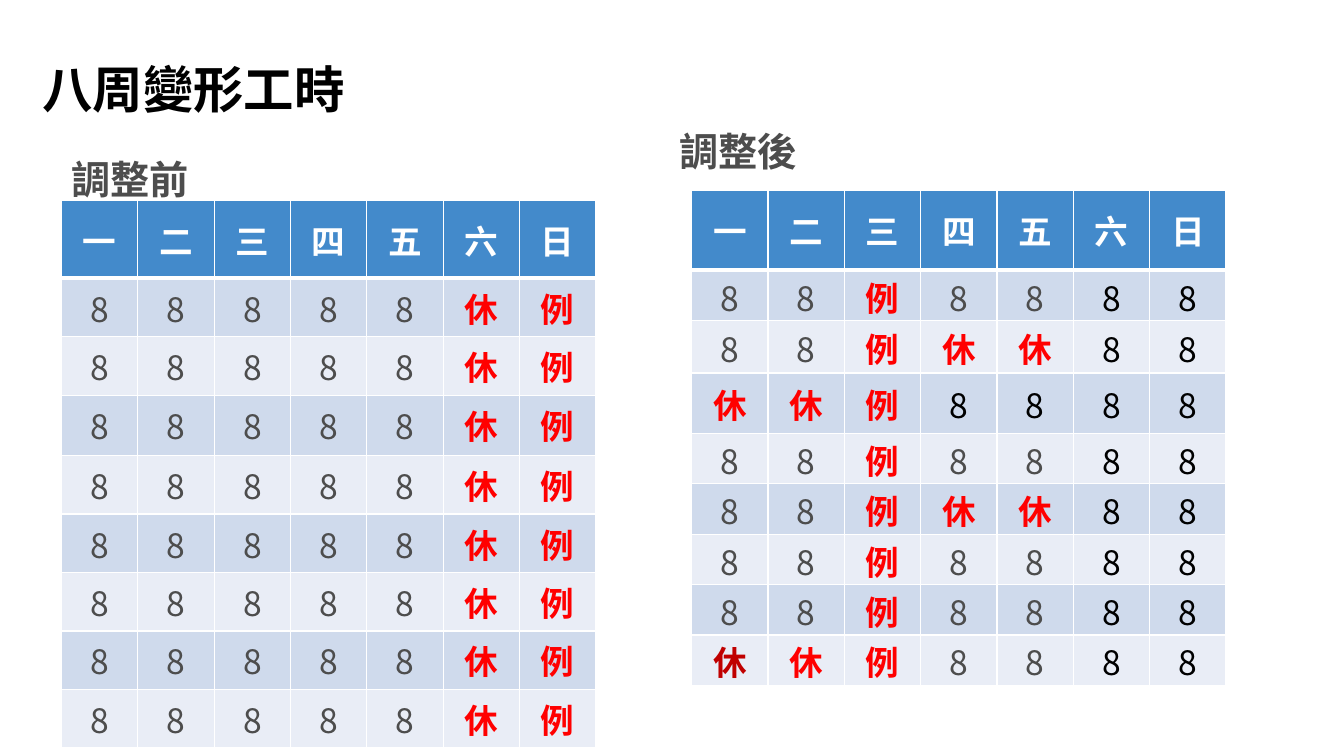
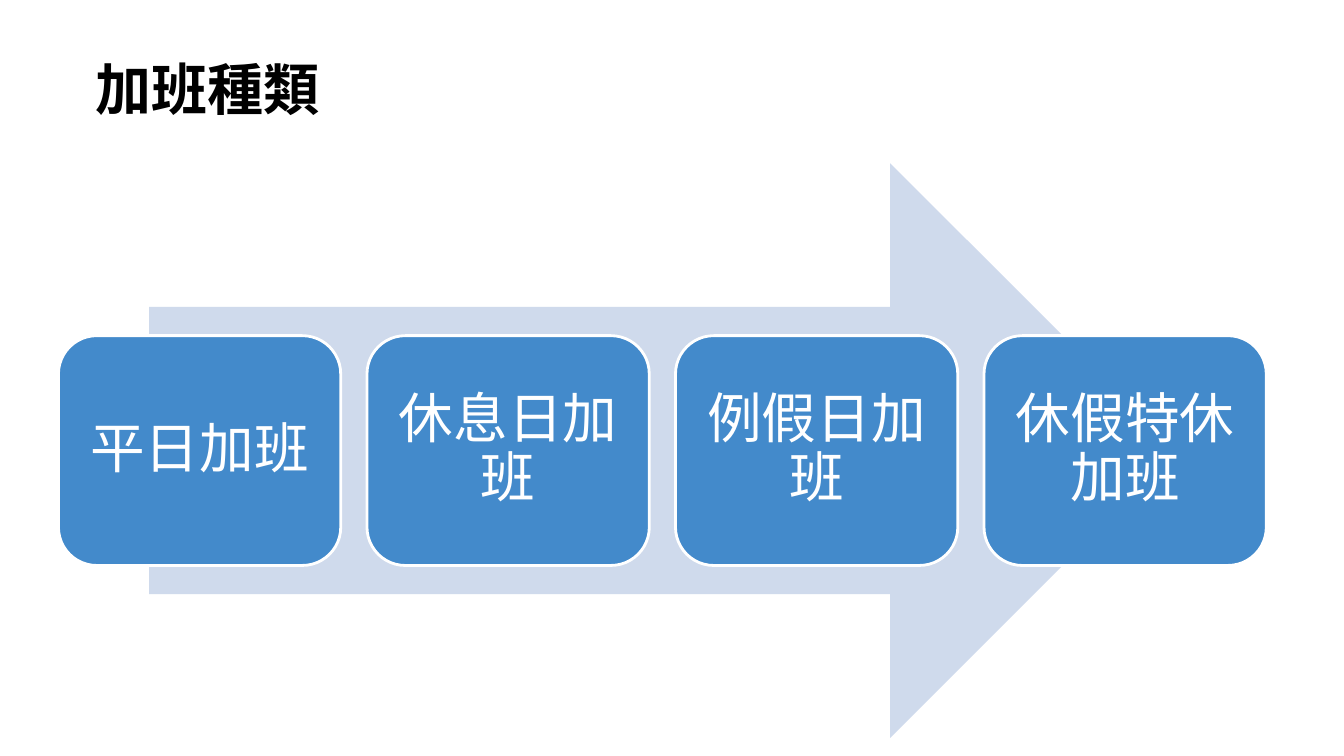
from lxml.etree import SubElement
from pptx import Presentation
from pptx.dml.color import RGBColor
from pptx.enum.shapes import MSO_SHAPE as Shape
from pptx.enum.text import MSO_ANCHOR as Anchor, PP_ALIGN as Align
from pptx.oxml import parse_xml
from pptx.oxml.ns import nsdecls, qn
from pptx.util import Inches, Pt

BLACK = RGBColor(0x00, 0x00, 0x00)
WHITE = RGBColor(0xFF, 0xFF, 0xFF)
GRAY = RGBColor(0x4D, 0x4D, 0x4D)
RED = RGBColor(0xFF, 0x00, 0x00)
DARK_RED = RGBColor(0xC0, 0x00, 0x00)
BLUE = RGBColor(0x43, 0x8A, 0xCB)
PALE_BLUE = RGBColor(0xCF, 0xDA, 0xEC)
PALEST_BLUE = RGBColor(0xE9, 0xED, 0xF6)
HEADING_FONT = "Noto Sans CJK SC"
STEP_FONT = "DejaVu Sans"

# Content: one letter per day; B is a moved workday, R a highlighted rest day
WEEKDAYS = "一二三四五六日"
DAYS = {
    "8": ("8", GRAY, False),
    "B": ("8", BLACK, False),
    "休": ("休", RED, True),
    "R": ("休", DARK_RED, True),
    "例": ("例", RED, True),
}
SCHEDULES = [
    dict(label="調整前", label_box=(0.61, 1.49, 1.92, 0.57), left=0.61, top=1.99,
         weeks=["88888休例"] * 8, margins=(0.05, 0.05),
         heights=[0.77, 0.58, 0.58, 0.6] + [0.58] * 5),
    dict(label="調整後", label_box=(6.64, 1.21, 2.32, 0.57), left=6.86, top=1.89,
         weeks=["88例88BB", "88例休休BB", "休休例BBBB", "88例88BB",
                "88例休休BB", "88例88BB", "88例88BB", "R休例88BB"],
         margins=(0.02, 0),
         heights=[0.79, 0.5, 0.52, 0.6] + [0.5] * 5),
]
TABLE_WIDTH = 5.3
OVERTIME_TYPES = ["平日加班", "休息日加班", "例假日加班", "休假特休加班"]


def write(frame, text, size, color, bold=False, font=HEADING_FONT,
          align=Align.LEFT, spacing=None):
    paragraph = frame.paragraphs[0]
    paragraph.alignment = align
    paragraph.line_spacing = spacing
    run = paragraph.add_run()
    run.text = text
    run.font.size, run.font.bold, run.font.name = Pt(size), bold, font
    run.font.color.rgb = color
    SubElement(run.font._element, qn("a:ea")).set("typeface", font)


def set_insets(frame, left, top, right, bottom):
    frame.margin_left, frame.margin_top = Inches(left), Inches(top)
    frame.margin_right, frame.margin_bottom = Inches(right), Inches(bottom)


def add_text(slide, box, text, **style):
    frame = slide.shapes.add_textbox(*map(Inches, box)).text_frame
    frame.word_wrap = True
    write(frame, text, **style)
    return frame


def add_title_slide(deck, title, box, size):
    slide = deck.slides.add_slide(deck.slide_layouts[6])
    frame = add_text(slide, box, title, size=size, color=BLACK, bold=True)
    frame.vertical_anchor = Anchor.MIDDLE
    set_insets(frame, 0.06, 0.06, 0.1, 0.06)
    return slide


def add_panel(slide, preset, box, fill):
    panel = slide.shapes.add_shape(preset, *map(Inches, box))
    panel.shadow.inherit = False
    panel.fill.solid()
    panel.fill.fore_color.rgb = fill
    panel.line.fill.background()
    return panel


def format_cell(cell, fill, margins, bottom_line=1):
    cell.fill.solid()
    cell.fill.fore_color.rgb = fill
    cell.vertical_anchor = Anchor.MIDDLE
    cell.margin_top, cell.margin_bottom = map(Inches, margins)
    edges = [("lnL", 1), ("lnR", 1), ("lnT", 1), ("lnB", bottom_line)]
    for position, (edge, width) in enumerate(edges):
        cell._tc.get_or_add_tcPr().insert(position, parse_xml(
            f'<a:{edge} {nsdecls("a")} w="{Pt(width)}"><a:solidFill>'
            f'<a:srgbClr val="{WHITE}"/></a:solidFill></a:{edge}>'))


def add_schedule(slide, label, label_box, left, top, weeks, margins, heights):
    add_text(slide, label_box, label, size=28, color=GRAY, bold=True)
    table = slide.shapes.add_table(
        len(heights), len(WEEKDAYS), Inches(left), Inches(top),
        Inches(TABLE_WIDTH), Inches(sum(heights))).table
    for column in table.columns:
        column.width = Inches(TABLE_WIDTH / len(WEEKDAYS))
    for row, height in zip(table.rows, heights):
        row.height = Inches(height)

    # Header row, then weeks in alternating bands
    for day, name in enumerate(WEEKDAYS):
        cell = table.cell(0, day)
        format_cell(cell, BLUE, (0.05, 0.05), bottom_line=3)
        write(cell.text_frame, name, 24, WHITE, bold=True, align=Align.CENTER)
    for number, week in enumerate(weeks, 1):
        for day, code in enumerate(week):
            cell = table.cell(number, day)
            format_cell(cell, PALE_BLUE if number % 2 else PALEST_BLUE, margins)
            text, color, bold = DAYS[code]
            write(cell.text_frame, text, 24, color, bold=bold, align=Align.CENTER)


def build_schedules(deck):
    slide = add_title_slide(deck, "八周變形工時", (0.36, 0.55, 12.38, 0.65), 36)
    for schedule in SCHEDULES:
        add_schedule(slide, **schedule)


def build_overtime(deck):
    slide = add_title_slide(deck, "加班種類", (0.89, 0.44, 11.23, 0.87), 40)
    add_panel(slide, Shape.RIGHT_ARROW, (1.48, 1.62, 10.2, 5.7), PALE_BLUE)
    first_left, pitch = 0.58, 3.06
    for index, overtime in enumerate(OVERTIME_TYPES):
        card = add_panel(slide, Shape.ROUNDED_RECTANGLE,
                         (first_left + index * pitch, 3.33, 2.8, 2.28), BLUE)
        card.line.color.rgb = WHITE
        card.line.width = Pt(2)
        frame = card.text_frame
        frame.word_wrap = True
        frame.vertical_anchor = Anchor.MIDDLE
        set_insets(frame, 0.16, 0.16, 0.16, 0.16)
        write(frame, overtime, 39, WHITE, font=STEP_FONT,
              align=Align.CENTER, spacing=0.9)


def main():
    deck = Presentation()
    deck.slide_width, deck.slide_height = Inches(13.33), Inches(7.5)
    build_schedules(deck)
    build_overtime(deck)
    deck.save("out.pptx")


if __name__ == "__main__":
    main()
